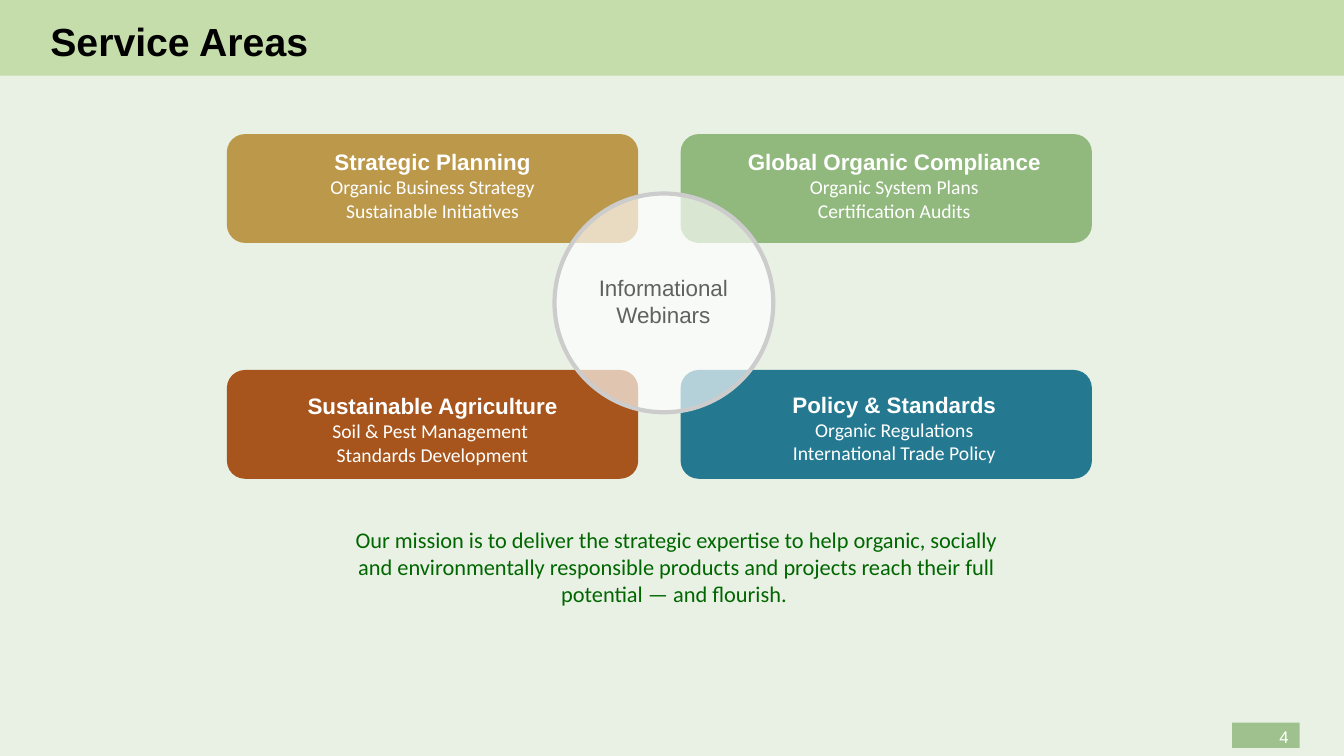
from lxml import etree
from pptx import Presentation
from pptx.dml.color import RGBColor
from pptx.enum import shapes, text
from pptx.oxml.ns import qn
from pptx.util import Inches, Pt

COLORS = {
    "background": "E9F1E5", "band": "70AE1C", "sage": "91B97E",
    "gold": "BC984B", "rust": "A7551C", "teal": "247991",
    "white": "FFFFFF", "ring": "CCCCCC", "gray": "616161",
    "mission": "006600", "black": "000000",
}
CARD_SIZE = (4.08, 1.08)
LABEL_SIZE = (3.58, 0.83)
# card left, card top, colour, label left, label top, heading, services
SERVICE_AREAS = [
    (2.25, 1.33, "gold", 2.5, 1.42, "Strategic Planning",
     ["Organic Business Strategy", "Sustainable Initiatives"]),
    (6.75, 1.33, "sage", 7.08, 1.42, "Global Organic Compliance",
     ["Organic System Plans", "Certification Audits"]),
    (2.25, 3.67, "rust", 2.5, 3.84, "Sustainable Agriculture",
     ["Soil & Pest Management ", "Standards Development"]),
    (6.75, 3.67, "teal", 7.08, 3.83, "Policy & Standards",
     ["Organic Regulations", "International Trade Policy"]),
]


def rgb(name):
    return RGBColor.from_string(COLORS[name])


def add_panel(slide, kind, left, top, width, height, color, opacity=100):
    """Add a filled preset shape without outline; opacity is in percent."""
    shape = slide.shapes.add_shape(
        kind, Inches(left), Inches(top), Inches(width), Inches(height))
    shape.shadow.inherit = False
    shape.fill.solid()
    shape.fill.fore_color.rgb = rgb(color)
    shape.line.fill.background()
    if opacity < 100:
        fill_color = shape.fill._xPr.find(qn("a:solidFill"))[0]
        etree.SubElement(fill_color, qn("a:alpha"), val=str(opacity * 1000))
    return shape


def write_lines(frame, lines, color, alignment):
    """Write one paragraph per (words, font, size, bold) line."""
    frame.word_wrap = True
    for index, (words, font, size, bold) in enumerate(lines):
        paragraph = frame.add_paragraph() if index else frame.paragraphs[0]
        paragraph.alignment = alignment
        run = paragraph.add_run()
        run.text = words
        run.font.name = font
        run.font.size = Pt(size)
        run.font.bold = bold
        run.font.color.rgb = rgb(color)


def add_label(slide, left, top, width, height, lines, color,
              alignment=text.PP_ALIGN.CENTER):
    box = slide.shapes.add_textbox(
        Inches(left), Inches(top), Inches(width), Inches(height))
    write_lines(box.text_frame, lines, color, alignment)
    return box


def place_title(slide, words):
    title = slide.shapes.title
    title.left, title.top = Inches(0.5), Inches(0.17)
    title.width, title.height = Inches(10.28), Inches(0.58)
    frame = title.text_frame
    frame.margin_left = frame.margin_right = 0
    frame.margin_top = frame.margin_bottom = 0
    frame.vertical_anchor = text.MSO_ANCHOR.TOP
    frame.auto_size = text.MSO_AUTO_SIZE.NONE
    write_lines(frame, [(words, "Arial", 28, True)], "black",
                text.PP_ALIGN.LEFT)
    title.element.getparent().append(title.element)  # in front of the band


def main():
    presentation = Presentation()
    presentation.slide_width = Inches(13.33)
    presentation.slide_height = Inches(7.5)
    slide = presentation.slides.add_slide(presentation.slide_layouts[5])
    slide.background.fill.solid()
    slide.background.fill.fore_color.rgb = rgb("background")

    kinds = shapes.MSO_SHAPE
    add_panel(slide, kinds.RECTANGLE, 0, 0, 13.33, 0.75, "band", 29)
    add_panel(slide, kinds.RECTANGLE, 12.22, 7.17, 0.67, 0.25, "sage", 85)
    page_number = add_label(slide, 12, 7.14, 0.88, 0.34,
                            [("4", "Arial", 12, False)], "white",
                            text.PP_ALIGN.RIGHT)
    page_number.text_frame.vertical_anchor = text.MSO_ANCHOR.MIDDLE

    for left, top, color, *_ in SERVICE_AREAS:
        add_panel(slide, kinds.ROUNDED_RECTANGLE, left, top, *CARD_SIZE, color)

    hub = add_panel(slide, kinds.OVAL, 5.5, 1.92, 2.17, 2.17, "white", 66)
    hub.line.color.rgb = rgb("ring")
    hub.line.width = Pt(3)
    add_label(slide, 5.83, 2.67, 1.5, 0.64,
              [(word, "Arial", 16, False)
               for word in ("Informational", "Webinars")], "gray")

    for _, _, _, left, top, heading, services in SERVICE_AREAS:
        lines = [(heading, "Arial", 16, True)]
        lines += [(service, "Calibri", 14, False) for service in services]
        add_label(slide, left, top, *LABEL_SIZE, lines, "white")

    mission = ("Our mission is to deliver the strategic expertise to help "
               "organic, socially and environmentally responsible products "
               "and projects reach their full potential — and flourish. ")
    add_label(slide, 3.42, 5.17, 6.58, 0.9,
              [(mission, "Calibri", 16, False)], "mission")
    place_title(slide, "Service Areas")
    presentation.save("out.pptx")


if __name__ == "__main__":
    main()
